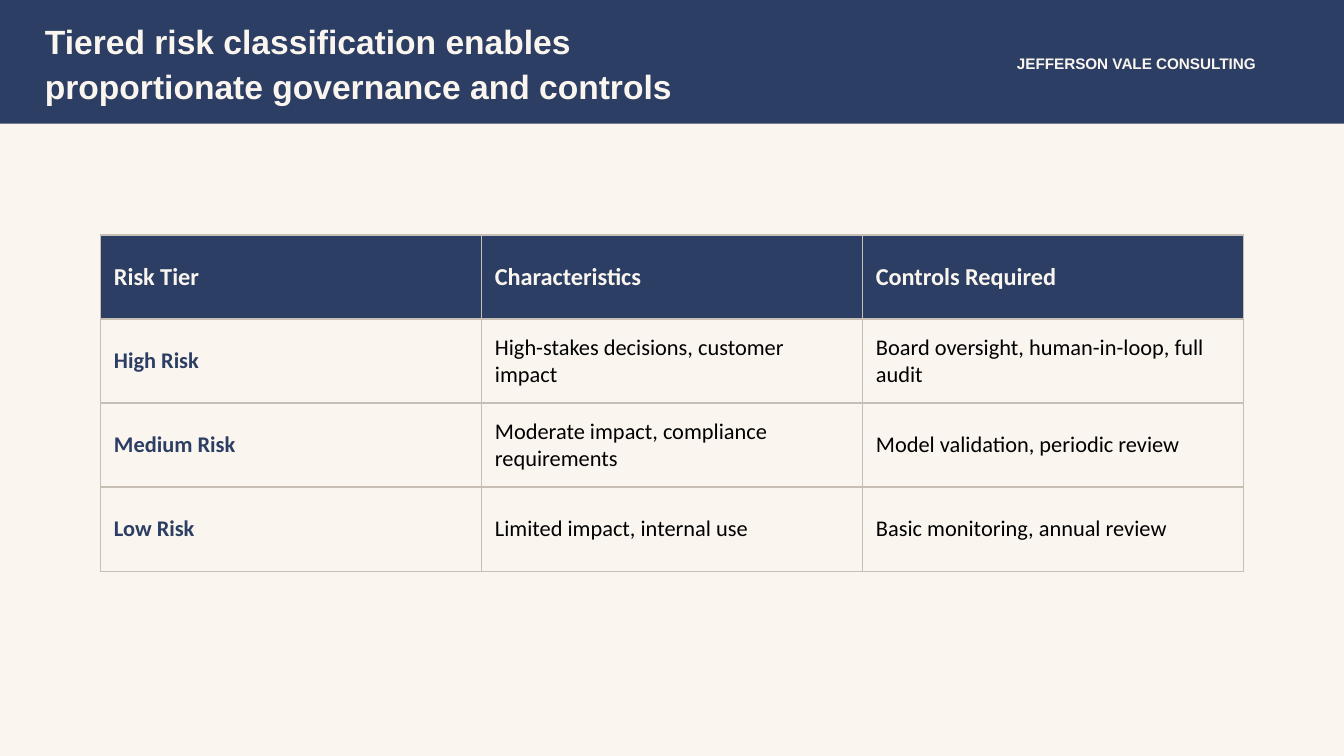
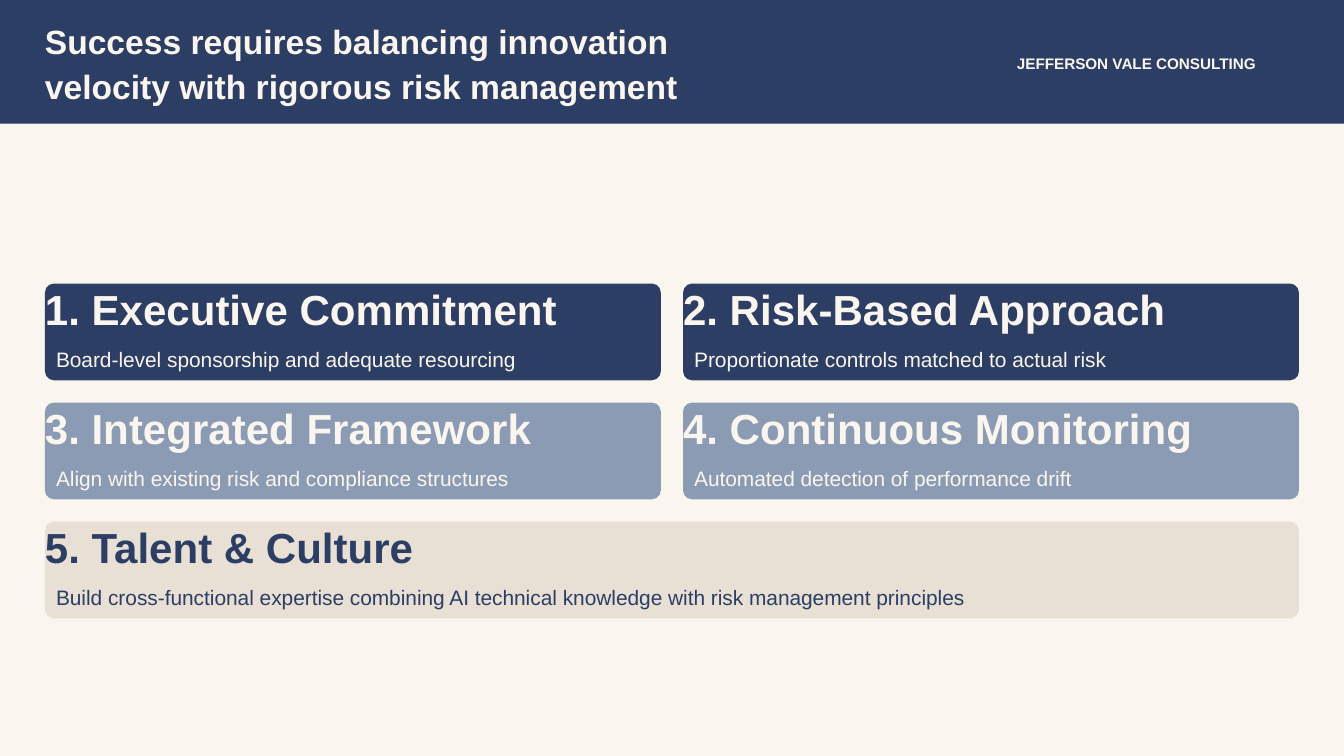
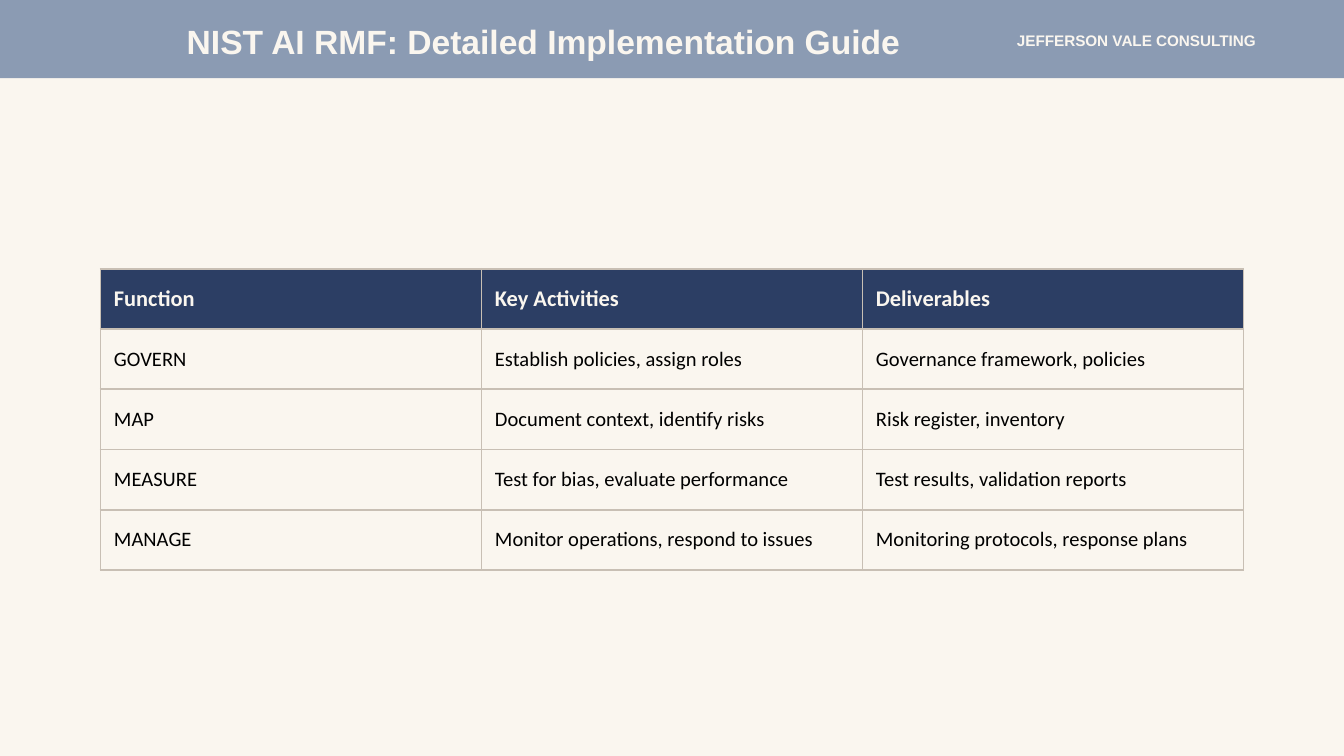
from dataclasses import dataclass

from lxml.etree import SubElement
from pptx import Presentation
from pptx.dml.color import RGBColor
from pptx.enum.shapes import MSO_SHAPE
from pptx.enum.text import MSO_ANCHOR
from pptx.oxml.ns import qn
from pptx.util import Cm, Pt


@dataclass(frozen=True)
class Theme:
    # Colours
    cream: str = "FAF6EF"
    navy: str = "2C3E64"
    slate: str = "8B9BB3"
    sand: str = "E8E0D5"
    rule: str = "C8BFB4"
    ink: str = "000000"
    # Fonts and type sizes
    font: str = "Arial"
    table_font: str = "Calibri"
    title_size: float = 18
    firm_size: float = 8.2
    heading_size: float = 22.5
    detail_size: float = 11.2


THEME = Theme()
SLIDE_WIDTH, SLIDE_HEIGHT = 25.4, 14.29
MARGIN = 0.85
FIRM = "JEFFERSON VALE CONSULTING"

RISK_TIERS = [
    ("Risk Tier", "Characteristics", "Controls Required"),
    ("High Risk", "High-stakes decisions, customer impact",
     "Board oversight, human-in-loop, full audit"),
    ("Medium Risk", "Moderate impact, compliance requirements",
     "Model validation, periodic review"),
    ("Low Risk", "Limited impact, internal use", "Basic monitoring, annual review"),
]

# Heading, detail, fill, text colour, columns spanned
SUCCESS_FACTORS = [
    ("1. Executive Commitment", "Board-level sponsorship and adequate resourcing",
     THEME.navy, THEME.cream, 1),
    ("2. Risk-Based Approach", "Proportionate controls matched to actual risk",
     THEME.navy, THEME.cream, 1),
    ("3. Integrated Framework", "Align with existing risk and compliance structures",
     THEME.slate, THEME.cream, 1),
    ("4. Continuous Monitoring", "Automated detection of performance drift",
     THEME.slate, THEME.cream, 1),
    ("5. Talent & Culture",
     "Build cross-functional expertise combining AI technical knowledge "
     "with risk management principles", THEME.sand, THEME.navy, 2),
]

RMF_FUNCTIONS = [
    ("Function", "Key Activities", "Deliverables"),
    ("GOVERN", "Establish policies, assign roles", "Governance framework, policies"),
    ("MAP", "Document context, identify risks", "Risk register, inventory"),
    ("MEASURE", "Test for bias, evaluate performance", "Test results, validation reports"),
    ("MANAGE", "Monitor operations, respond to issues",
     "Monitoring protocols, response plans"),
]


def write_text(frame, text, *, size, color, font=THEME.font, bold=False,
               line=None, after=None):
    paragraph = frame.paragraphs[0]
    if line is not None:
        paragraph.line_spacing = Pt(line)
    if after is not None:
        paragraph.space_after = Pt(after)
    run = paragraph.add_run()
    run.text = text
    run.font.name = font
    run.font.size = Pt(size)
    run.font.bold = bold
    run.font.color.rgb = RGBColor.from_string(color)


def add_label(slide, text, left, top, width, height, **style):
    frame = slide.shapes.add_textbox(Cm(left), Cm(top), Cm(width), Cm(height)).text_frame
    frame.word_wrap = True
    frame.margin_left = frame.margin_right = frame.margin_top = frame.margin_bottom = 0
    write_text(frame, text, **style)


def add_panel(slide, left, top, width, height, fill, kind=MSO_SHAPE.RECTANGLE):
    panel = slide.shapes.add_shape(kind, Cm(left), Cm(top), Cm(width), Cm(height))
    panel.shadow.inherit = False
    panel.fill.solid()
    panel.fill.fore_color.rgb = RGBColor.from_string(fill)
    panel.line.fill.background()
    return panel


def add_titled_slide(deck, title, *, band_height=2.34, band_fill=THEME.navy,
                     title_left=MARGIN, title_width=12.22):
    slide = deck.slides.add_slide(deck.slide_layouts[6])
    slide.background.fill.solid()
    slide.background.fill.fore_color.rgb = RGBColor.from_string(THEME.cream)

    # Title band with the firm's name centred vertically
    add_panel(slide, 0, 0, SLIDE_WIDTH, band_height, band_fill)
    title_top, firm_height = 0.32, 0.42
    add_label(slide, title, title_left, title_top, title_width,
              band_height - 2 * title_top,
              size=THEME.title_size, color=THEME.cream, bold=True, line=24)
    add_label(slide, FIRM, 19.22, (band_height - firm_height) / 2, 5.44, firm_height,
              size=THEME.firm_size, color=THEME.cream, bold=True, line=11.6)
    return slide


def add_borders(cell):
    properties = cell._tc.get_or_add_tcPr()
    for side in ("a:lnL", "a:lnR", "a:lnT", "a:lnB"):
        border = SubElement(properties, qn(side), w=str(Pt(1)))
        fill = SubElement(border, qn("a:solidFill"))
        SubElement(fill, qn("a:srgbClr"), val=THEME.rule)


def add_grid(slide, rows, top, row_height, *, header_size, body_size, bold_labels=False):
    column_width = 7.2
    columns = len(rows[0])
    grid = slide.shapes.add_table(
        len(rows), columns, Cm(1.9), Cm(top),
        Cm(column_width * columns), Cm(row_height * len(rows))).table
    for column in grid.columns:
        column.width = Cm(column_width)
    for r, row in enumerate(rows):
        grid.rows[r].height = Cm(row_height)
        for c, text in enumerate(row):
            cell = grid.cell(r, c)
            cell.vertical_anchor = MSO_ANCHOR.MIDDLE
            add_borders(cell)
            is_header = r == 0
            is_label = bold_labels and c == 0
            if is_header:
                cell.fill.solid()
                cell.fill.fore_color.rgb = RGBColor.from_string(THEME.navy)
                color = THEME.cream
            else:
                cell.fill.background()
                color = THEME.navy if is_label else THEME.ink
            write_text(cell.text_frame, text, font=THEME.table_font, color=color,
                       size=header_size if is_header else body_size,
                       bold=is_header or is_label)


def add_factor_card(slide, heading, detail, left, top, width, height, fill, color):
    card = add_panel(slide, left, top, width, height, fill, MSO_SHAPE.ROUNDED_RECTANGLE)
    card.adjustments[0] = 0.093
    add_label(slide, heading, left, top, width * 1.02, 0.97,
              size=THEME.heading_size, color=color, bold=True, line=27, after=9)
    inset = 0.21
    add_label(slide, detail, left + inset, top + 1.1, width - 2 * inset, 0.56,
              size=THEME.detail_size, color=color, line=15.8)


def add_factor_cards(slide):
    width, height, gap, first_top = 11.64, 1.83, 0.42, 5.36
    for i, (heading, detail, fill, color, span) in enumerate(SUCCESS_FACTORS):
        row, column = divmod(i, 2)
        add_factor_card(slide, heading, detail,
                        MARGIN + column * (width + gap), first_top + row * (height + gap),
                        span * width + (span - 1) * gap, height, fill, color)


def main():
    deck = Presentation()
    deck.slide_width, deck.slide_height = Cm(SLIDE_WIDTH), Cm(SLIDE_HEIGHT)

    # Risk tiers
    tiers = add_titled_slide(
        deck, "Tiered risk classification enables proportionate governance and controls")
    add_grid(tiers, RISK_TIERS, 4.44, 1.59, header_size=13, body_size=12, bold_labels=True)

    # Success factors
    factors = add_titled_slide(
        deck, "Success requires balancing innovation velocity with rigorous risk management")
    add_factor_cards(factors)

    # Implementation guide
    guide = add_titled_slide(
        deck, "NIST AI RMF: Detailed Implementation Guide",
        band_height=1.48, band_fill=THEME.slate, title_left=3.53, title_width=13.77)
    add_grid(guide, RMF_FUNCTIONS, 5.08, 1.14, header_size=12, body_size=11)

    deck.save("out.pptx")


if __name__ == "__main__":
    main()
